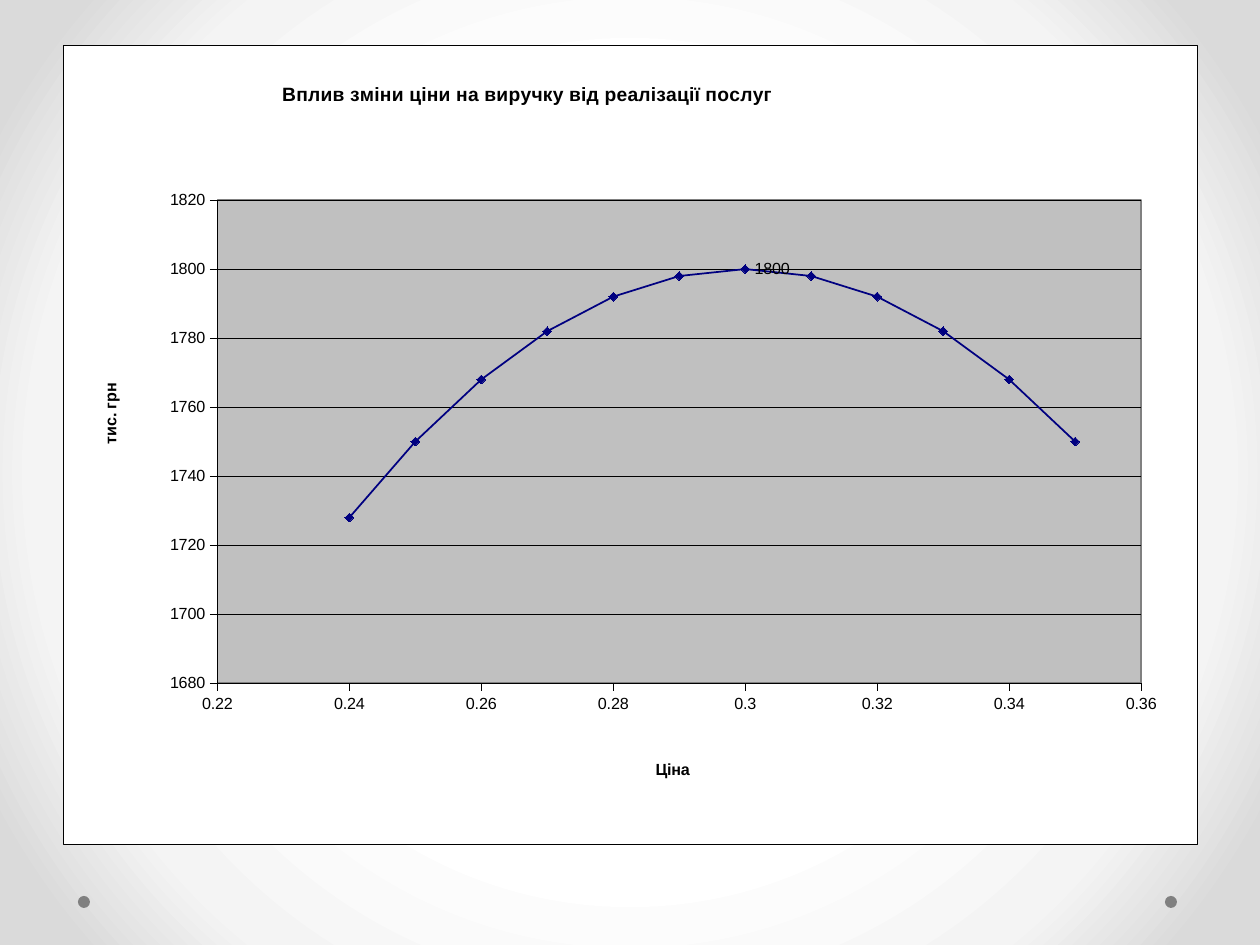
"""Build a slide with a scatter chart of revenue against price."""
from lxml.etree import SubElement
from pptx import Presentation
from pptx.chart.data import XyChartData
from pptx.chart.datalabel import DataLabels
from pptx.dml.color import RGBColor
from pptx.enum.chart import XL_CHART_TYPE, XL_LABEL_POSITION, XL_MARKER_STYLE, XL_TICK_MARK
from pptx.enum.shapes import MSO_SHAPE
from pptx.oxml import parse_xml
from pptx.oxml.ns import nsdecls, qn
from pptx.util import Pt

COLORS = {"black": "000000", "white": "FFFFFF", "plot": "C0C0C0", "border": "808080",
          "series": "000080", "dot": "808080"}
BACKGROUND_STOPS = [(50, "FFFFFF"), (76, "F4F4F4"), (92, "DADADA")]
FONT = "Arial"
TEXT_SIZE = 9.2
CHART_BOX = (63, 45, 1134, 799)
PLOT_BOX = (0.136, 0.194, 0.815, 0.605)
DOT_LEFTS, DOT_TOP, DOT_SIZE = (78, 1165), 896, 12
TITLE = ("Вплив зміни ціни на виручку від реалізації послуг", 11, (0.19, 0.04))
PRICE_AXIS = ("Ціна", (0.52, 0.89), 0.22, 0.36, 0.02)
REVENUE_AXIS = ("тис. грн", (0.03, 0.42), 1680, 1820, 20)
POINTS = [(0.35, 1750), (0.34, 1768), (0.33, 1782), (0.32, 1792), (0.31, 1798), (0.3, 1800),
          (0.29, 1798), (0.28, 1792), (0.27, 1782), (0.26, 1768), (0.25, 1750), (0.24, 1728)]
PEAK = POINTS.index(max(POINTS, key=lambda point: point[1]))


def px(value):
    return round(value * 914400 / 126)


def color(name):
    return RGBColor.from_string(COLORS[name])


def style_font(font, size=TEXT_SIZE, bold=False):
    font.name, font.size, font.bold = FONT, Pt(size), bold
    font.color.rgb = color("black")


def style_line(line, name="black", width=0.25):
    line.color.rgb = color(name)
    line.width = Pt(width)


def place(parent, index, **values):
    layout = parent.find(qn("c:layout"))
    if layout is None:
        layout = parse_xml(f'<c:layout {nsdecls("c")}/>')
        parent.insert(index, layout)
    manual = SubElement(layout, qn("c:manualLayout"))
    for tag, value in values.items():
        SubElement(manual, qn(f"c:{tag}")).set("val", str(value))


def set_title(title, text, size, position):
    run = title.text_frame.paragraphs[0].add_run()
    run.text = text
    style_font(run.font, size, True)
    x, y = position
    place(title._element, 1, xMode="edge", yMode="edge", x=x, y=y)


def area_format(fill, line, width):
    return parse_xml(
        f'<c:spPr {nsdecls("c", "a")}><a:solidFill><a:srgbClr val="{COLORS[fill]}"/></a:solidFill>'
        f'<a:ln w="{Pt(width)}"><a:solidFill><a:srgbClr val="{COLORS[line]}"/></a:solidFill></a:ln></c:spPr>')


def set_background(slide):
    fill = slide.background.fill
    fill.gradient()
    stops = "".join(f'<a:gs pos="{position * 1000}"><a:srgbClr val="{value}"/></a:gs>'
                    for position, value in BACKGROUND_STOPS)
    gradient = parse_xml(
        f'<a:gradFill {nsdecls("a")} rotWithShape="1"><a:gsLst>{stops}</a:gsLst><a:path path="circle">'
        '<a:fillToRect l="50000" t="50000" r="50000" b="50000"/></a:path></a:gradFill>')
    old = next(slide.background._cSld.iter(qn("a:gradFill")))
    old.getparent().replace(old, gradient)


def add_dots(slide):
    for left in DOT_LEFTS:
        dot = slide.shapes.add_shape(MSO_SHAPE.OVAL, px(left), px(DOT_TOP), px(DOT_SIZE), px(DOT_SIZE))
        dot.shadow.inherit = False
        dot.fill.solid()
        dot.fill.fore_color.rgb = color("dot")
        dot.line.fill.background()


def style_axis(axis, text, position, minimum, maximum, step):
    axis.minimum_scale, axis.maximum_scale, axis.major_unit = minimum, maximum, step
    axis.major_tick_mark, axis.minor_tick_mark = XL_TICK_MARK.OUTSIDE, XL_TICK_MARK.NONE
    axis.tick_labels.number_format = "General"
    axis.tick_labels.number_format_is_linked = False
    style_font(axis.tick_labels.font)
    style_line(axis.format.line)
    set_title(axis.axis_title, text, TEXT_SIZE, position)


def style_series(series):
    series.smooth = False
    style_line(series.format.line, "series", 1)
    marker = series.marker
    marker.style, marker.size = XL_MARKER_STYLE.DIAMOND, 5
    marker.format.fill.solid()
    marker.format.fill.fore_color.rgb = color("series")
    style_line(marker.format.line, "series")
    label = series.points[PEAK].data_label
    style_font(label.font)
    label.position = XL_LABEL_POSITION.RIGHT
    DataLabels(series._element.get_or_add_dLbls()).show_value = False


def add_chart(slide):
    data = XyChartData()
    series = data.add_series("Series 1")
    for price, revenue in POINTS:
        series.add_data_point(price, revenue)
    chart = slide.shapes.add_chart(XL_CHART_TYPE.XY_SCATTER_LINES, *map(px, CHART_BOX), data).chart
    chart.has_legend = False
    style_font(chart.font)
    set_title(chart.chart_title, *TITLE)
    style_axis(chart.category_axis, *PRICE_AXIS)
    style_axis(chart.value_axis, *REVENUE_AXIS)
    chart.category_axis.has_major_gridlines = False
    style_line(chart.value_axis.major_gridlines.format.line)
    chart.plots[0].vary_by_categories = False
    style_series(chart.plots[0].series[0])

    chart_element = chart._chartSpace.find(qn("c:chart"))
    chart_element.addnext(area_format("white", "black", 0.25))
    plot_area = chart_element.find(qn("c:plotArea"))
    plot_area.append(area_format("plot", "border", 1))
    x, y, width, height = PLOT_BOX
    place(plot_area, 0, layoutTarget="inner", xMode="edge", yMode="edge", x=x, y=y, w=width, h=height)


def main():
    presentation = Presentation()
    presentation.slide_width, presentation.slide_height = px(1260), px(945)
    slide = presentation.slides.add_slide(presentation.slide_layouts[6])
    set_background(slide)
    add_dots(slide)
    add_chart(slide)
    presentation.save("out.pptx")


if __name__ == "__main__":
    main()
